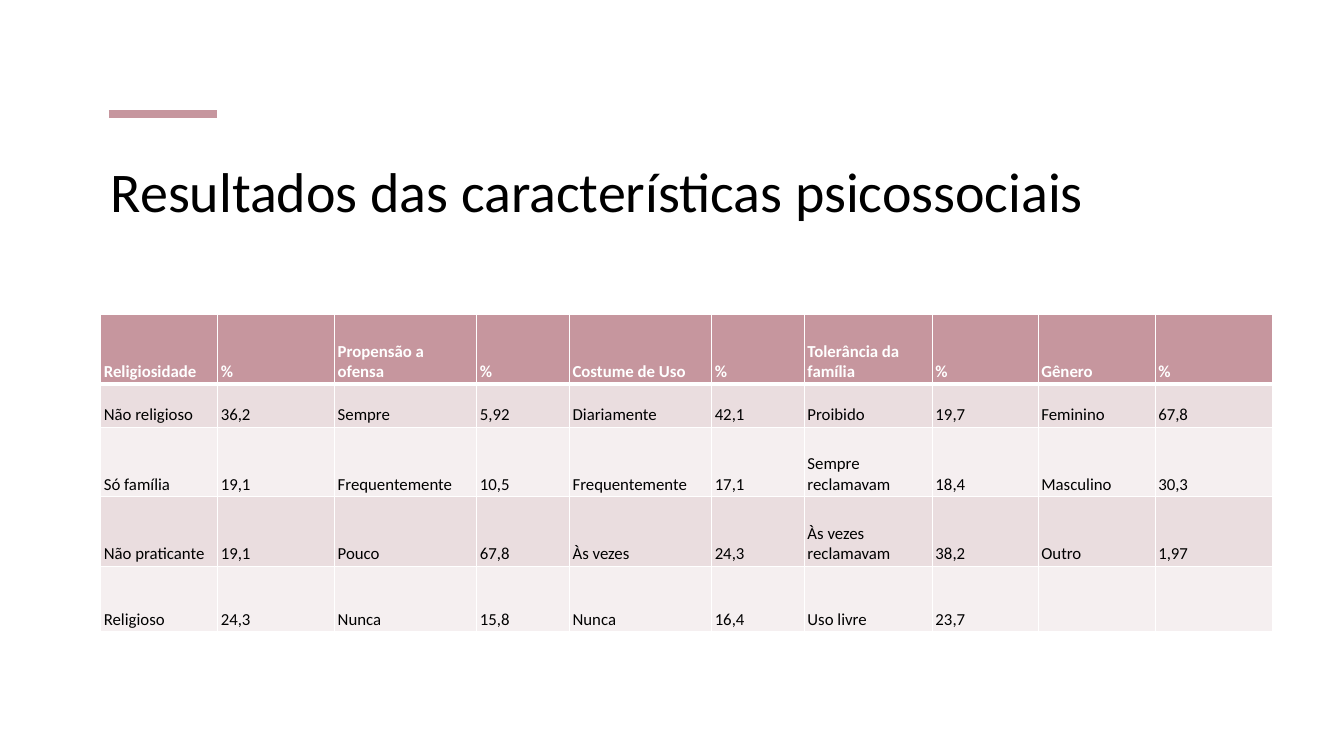
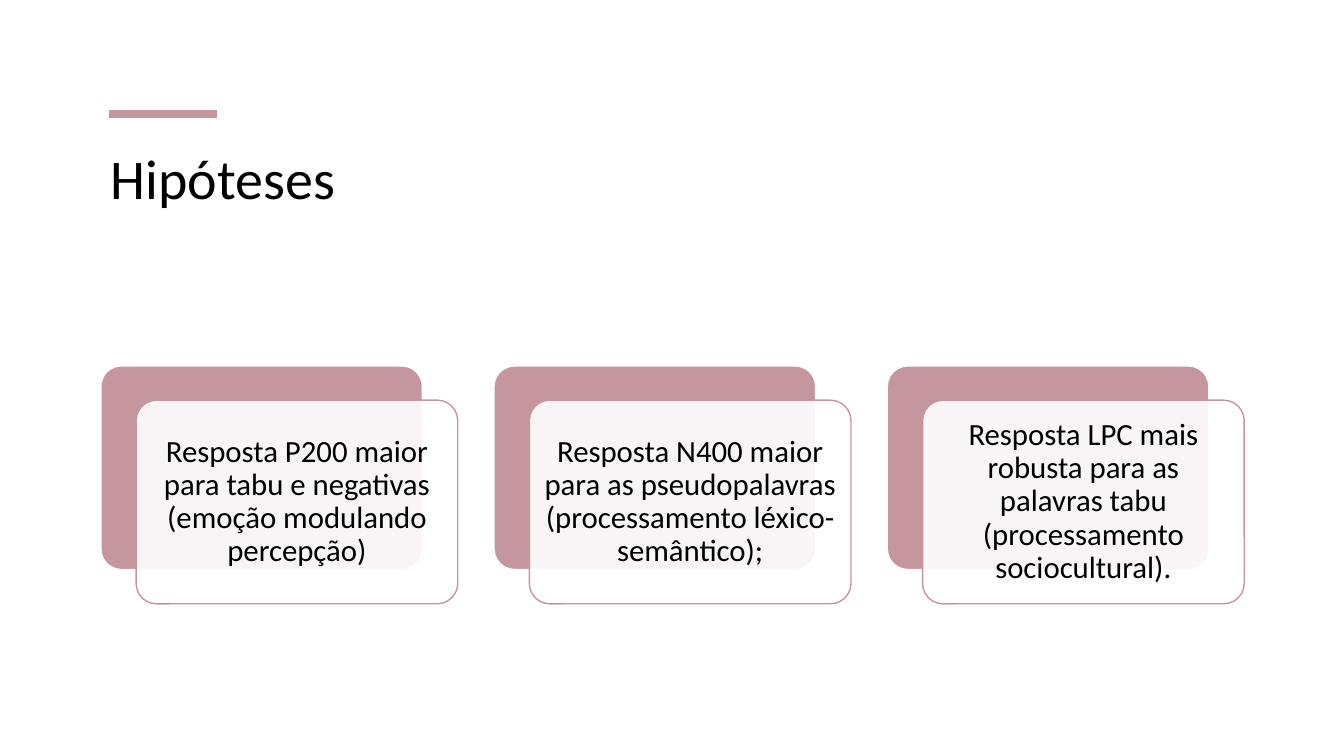
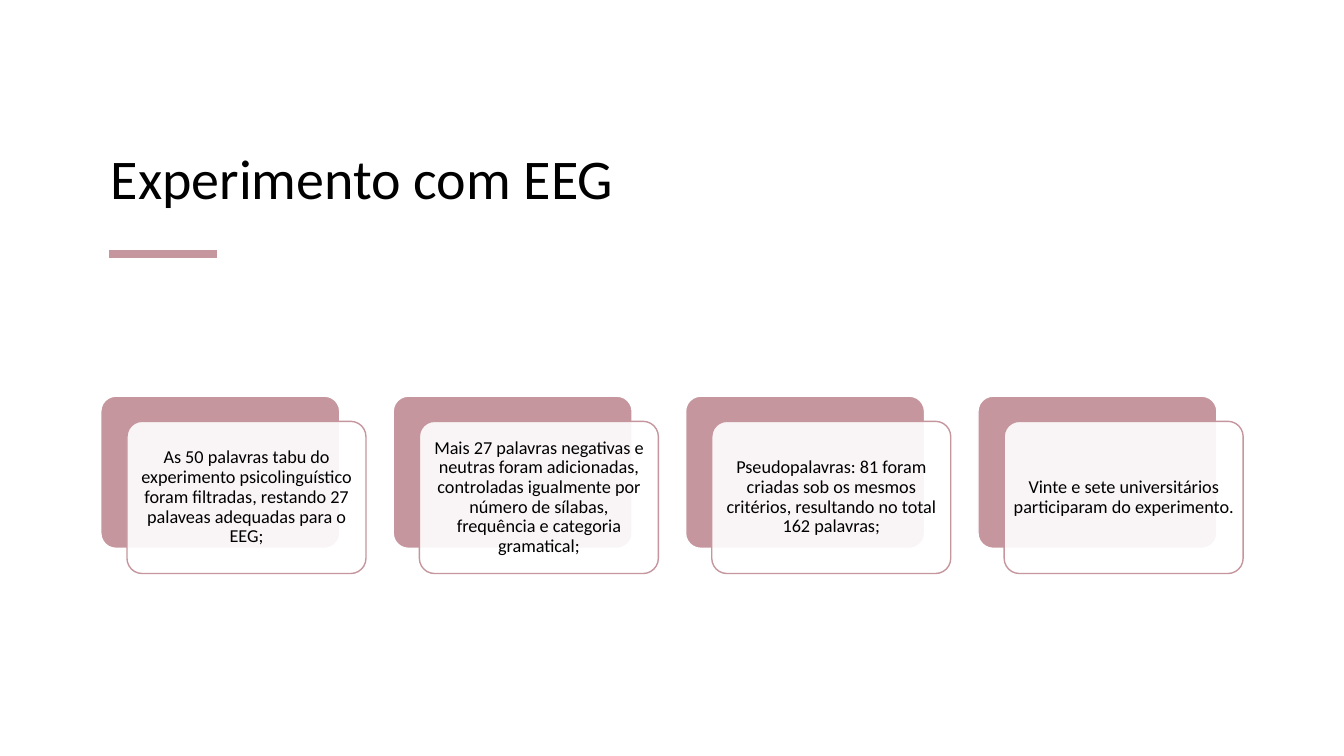
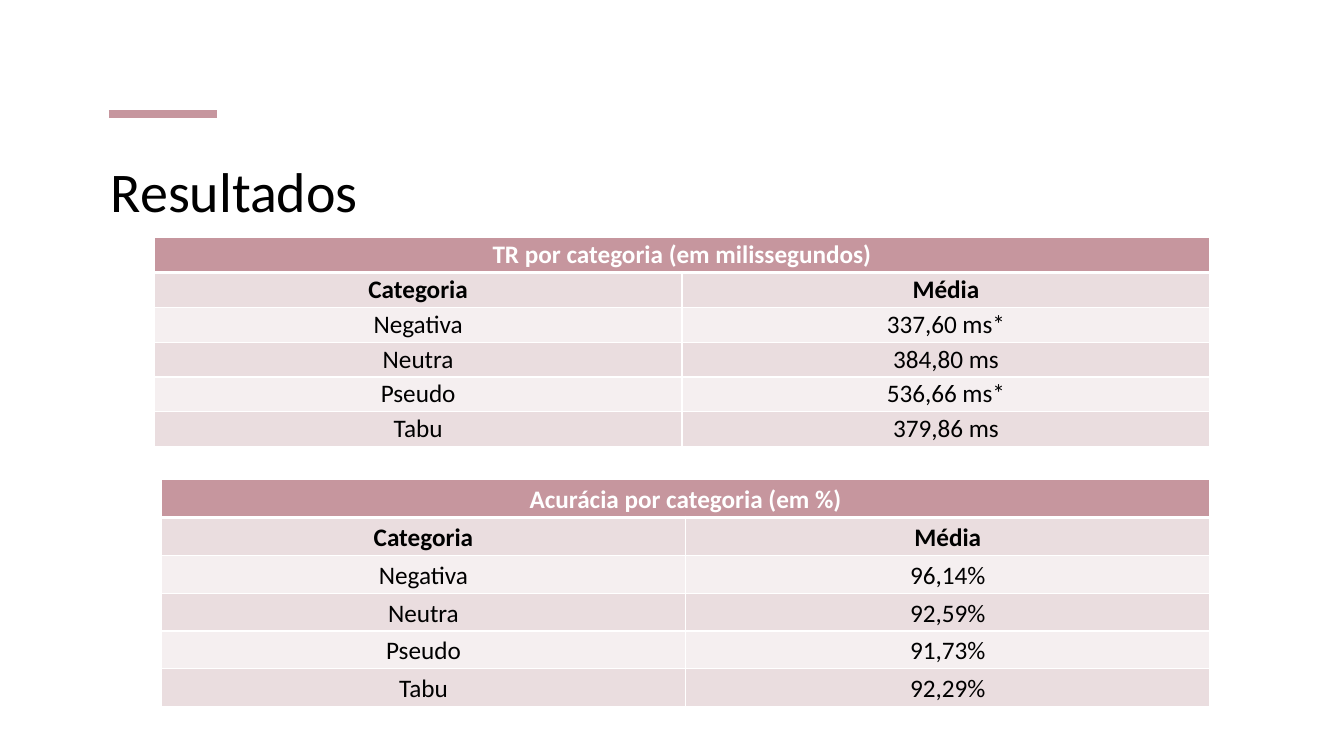
"""Build four slides on the taboo-word experiments."""
from dataclasses import dataclass

from lxml import etree
from pptx import Presentation
from pptx.dml.color import RGBColor
from pptx.enum import shapes, text
from pptx.oxml import ns
from pptx.util import Inches, Pt


@dataclass(frozen=True)
class Theme:
    """Colours, font and type sizes of the deck."""
    font: str = "Calibri"
    accent: RGBColor = RGBColor(0xC6, 0x96, 0x9E)
    band_dark: RGBColor = RGBColor(0xEA, 0xDD, 0xDF)
    band_light: RGBColor = RGBColor(0xF5, 0xEF, 0xF0)
    ink: RGBColor = RGBColor(0, 0, 0)
    paper: RGBColor = RGBColor(0xFF, 0xFF, 0xFF)
    title: int = 40
    card_large: int = 22
    card_small: int = 13
    table_large: int = 18
    table_small: int = 12


THEME = Theme()

PSYCHOSOCIAL_WIDTHS = [1.16, 1.16, 1.41, 0.92, 1.41, 0.92, 1.27, 1.05, 1.16, 1.16]
PSYCHOSOCIAL_HEIGHTS = [0.69, 0.43, 0.69, 0.69, 0.65]
PSYCHOSOCIAL = [
    ["Religiosidade", "%", "Propensão a ofensa", "%", "Costume de Uso", "%",
     "Tolerância da família", "%", "Gênero", "%"],
    ["Não religioso", "36,2", "Sempre", "5,92", "Diariamente", "42,1",
     "Proibido", "19,7", "Feminino", "67,8"],
    ["Só família", "19,1", "Frequentemente", "10,5", "Frequentemente", "17,1",
     "Sempre reclamavam", "18,4", "Masculino", "30,3"],
    ["Não praticante", "19,1", "Pouco", "67,8", "Às vezes", "24,3",
     "Às vezes reclamavam", "38,2", "Outro", "1,97"],
    ["Religioso", "24,3", "Nunca", "15,8", "Nunca", "16,4",
     "Uso livre", "23,7", "", ""],
]
HYPOTHESES = [
    "Resposta P200 maior para tabu e negativas (emoção modulando percepção)",
    "Resposta N400 maior para as pseudopalavras (processamento léxico-semântico);",
    "Resposta LPC mais robusta para as palavras tabu (processamento sociocultural).",
]
EEG_STEPS = [
    "As 50 palavras tabu do experimento psicolinguístico foram filtradas, "
    "restando 27 palaveas adequadas para o EEG;",
    "Mais 27 palavras negativas e neutras foram adicionadas, controladas "
    "igualmente por número de sílabas, frequência e categoria gramatical;",
    "Pseudopalavras: 81 foram criadas sob os mesmos critérios, resultando no "
    "total 162 palavras;",
    "Vinte e sete universitários participaram do experimento.",
]
CATEGORIES = ["Categoria", "Negativa", "Neutra", "Pseudo", "Tabu"]
REACTION_TIMES = ["Média", "337,60 ms*", "384,80 ms", "536,66 ms*", "379,86 ms"]
ACCURACIES = ["Média", "96,14%", "92,59%", "91,73%", "92,29%"]


def style_paragraph(paragraph, size, color, bold=False, align=text.PP_ALIGN.LEFT):
    """Apply the deck font and alignment to a paragraph."""
    paragraph.alignment = align
    font = paragraph.font
    font.name, font.size, font.bold = THEME.font, Pt(size), bold
    font.color.rgb = color


def add_accent_rule(slide, top):
    """Draw the short accent rule that goes with the title."""
    rule = slide.shapes.add_connector(
        shapes.MSO_CONNECTOR.STRAIGHT,
        Inches(1.08), Inches(top), Inches(2.15), Inches(top))
    rule.line.color.rgb = THEME.accent
    rule.line.width = Pt(6)
    etree.SubElement(rule._element.spPr, ns.qn("a:effectLst"))


def add_titled_slide(deck, heading, box, anchor, rule_top=1.13):
    """Add a slide with its title and accent rule."""
    slide = deck.slides.add_slide(deck.slide_layouts[5])
    title = slide.shapes.title
    title.left, title.top, title.width, title.height = map(Inches, box)
    frame = title.text_frame
    frame.text = heading
    frame.word_wrap = True
    frame.auto_size = text.MSO_AUTO_SIZE.NONE
    frame.vertical_anchor = anchor
    style_paragraph(frame.paragraphs[0], THEME.title, THEME.ink)
    add_accent_rule(slide, rule_top)
    return slide


def add_upper_titled_slide(deck, heading):
    """Add a slide whose title hangs from the top of its box."""
    return add_titled_slide(deck, heading, (1, 1.5, 11.33, 1.44), text.MSO_ANCHOR.TOP)


def add_lower_titled_slide(deck, heading, rule_top=1.13):
    """Add a slide whose title stands on the bottom of its box."""
    return add_titled_slide(deck, heading, (1, 0.62, 11.06, 1.52),
                            text.MSO_ANCHOR.BOTTOM, rule_top)


def add_panel(slide, left, top, size, fill, outline):
    """Add one rounded panel of a card."""
    panel = slide.shapes.add_shape(
        shapes.MSO_SHAPE.ROUNDED_RECTANGLE,
        Inches(left), Inches(top), *map(Inches, size))
    panel.adjustments[0] = 0.1
    panel.shadow.inherit = False
    panel.fill.solid()
    panel.fill.fore_color.rgb = fill
    panel.line.color.rgb = outline
    panel.line.width = Pt(1)
    return panel


def add_card(slide, statement, left, top, size, offset, inset, type_size):
    """Add a translucent text panel over a shifted accent panel."""
    add_panel(slide, left, top, size, THEME.accent, THEME.paper)
    front = add_panel(slide, left + offset[0], top + offset[1], size,
                      THEME.paper, THEME.accent)
    fill_color = front._element.spPr.find(ns.qn("a:solidFill"))[0]
    etree.SubElement(fill_color, ns.qn("a:alpha"), val="90000")
    frame = front.text_frame
    frame.text = statement
    frame.word_wrap = True
    frame.vertical_anchor = text.MSO_ANCHOR.MIDDLE
    frame.margin_left = frame.margin_right = Inches(inset)
    frame.margin_top = frame.margin_bottom = Inches(inset)
    paragraph = frame.paragraphs[0]
    paragraph.line_spacing = 0.9
    style_paragraph(paragraph, type_size, THEME.ink, align=text.PP_ALIGN.CENTER)


def add_card_row(slide, statements, top, step, **card):
    """Lay cards out from the left margin at an even step."""
    for index, statement in enumerate(statements):
        add_card(slide, statement, 1 + index * step, top, **card)


def set_borders(cell, top, bottom):
    """Give a cell white borders with the given top and bottom widths."""
    properties = cell._tc.get_or_add_tcPr()
    for side, width in (("lnL", 1), ("lnR", 1), ("lnT", top), ("lnB", bottom)):
        border = etree.SubElement(properties, ns.qn(f"a:{side}"), w=str(Pt(width)))
        paint = etree.SubElement(border, ns.qn("a:solidFill"))
        etree.SubElement(paint, ns.qn("a:srgbClr"), val=str(THEME.paper))


def style_cell(cell, row, size, bold, align):
    """Style a cell as header or as one of the alternating bands."""
    set_borders(cell, 3 if row == 1 else 1, 3 if row == 0 else 1)
    bands = (THEME.band_light, THEME.band_dark)
    cell.fill.solid()
    cell.fill.fore_color.rgb = bands[row % 2] if row else THEME.accent
    cell.vertical_anchor = text.MSO_ANCHOR.BOTTOM
    cell.margin_left = cell.margin_right = Inches(0.03)
    cell.margin_top = cell.margin_bottom = Inches(0.02)
    style_paragraph(cell.text_frame.paragraphs[0], size,
                    THEME.ink if row else THEME.paper, bold, align)


def add_banded_table(slide, rows, left, top, widths, heights, size,
                     bold_rows=1, align=text.PP_ALIGN.LEFT):
    """Add a banded table and return it."""
    table = slide.shapes.add_table(
        len(rows), len(widths), Inches(left), Inches(top),
        Inches(sum(widths)), Inches(sum(heights))).table
    table.first_row = table.horz_banding = False
    for column, width in zip(table.columns, widths):
        column.width = Inches(width)
    for index, (values, height) in enumerate(zip(rows, heights)):
        table.rows[index].height = Inches(height)
        for cell, value in zip(table.rows[index].cells, values):
            cell.text = value
            style_cell(cell, index, size, index < bold_rows, align)
    return table


def add_mean_table(slide, caption, means, left, top, width, height):
    """Add a table of means by category under a merged caption."""
    rows = [(caption, ""), *zip(CATEGORIES, means)]
    table = add_banded_table(
        slide, rows, left, top, [width / 2] * 2, [height / len(rows)] * len(rows),
        THEME.table_large, bold_rows=2, align=text.PP_ALIGN.CENTER)
    table.cell(0, 0).merge(table.cell(0, 1))


def main():
    """Build and save the deck."""
    deck = Presentation()
    deck.slide_width, deck.slide_height = Inches(13.33), Inches(7.5)

    psychosocial = add_upper_titled_slide(
        deck, "Resultados das características psicossociais")
    add_banded_table(psychosocial, PSYCHOSOCIAL, 1, 3.12, PSYCHOSOCIAL_WIDTHS,
                     PSYCHOSOCIAL_HEIGHTS, THEME.table_small)

    hypotheses = add_lower_titled_slide(deck, "Hipóteses")
    add_card_row(hypotheses, HYPOTHESES, top=3.63, step=3.9, size=(3.19, 2.02),
                 offset=(0.35, 0.34), inset=0.09, type_size=THEME.card_large)

    experiment = add_lower_titled_slide(deck, "Experimento com EEG", rule_top=2.52)
    add_card_row(experiment, EEG_STEPS, top=3.93, step=2.9, size=(2.37, 1.51),
                 offset=(0.26, 0.25), inset=0.05, type_size=THEME.card_small)

    results = add_upper_titled_slide(deck, "Resultados")
    add_mean_table(results, "TR por categoria (em milissegundos)", REACTION_TIMES,
                   1.53, 2.36, 10.47, 2.05)
    add_mean_table(results, "Acurácia por categoria (em %)", ACCURACIES,
                   1.6, 4.76, 10.4, 2.25)

    deck.save("out.pptx")


if __name__ == "__main__":
    main()
